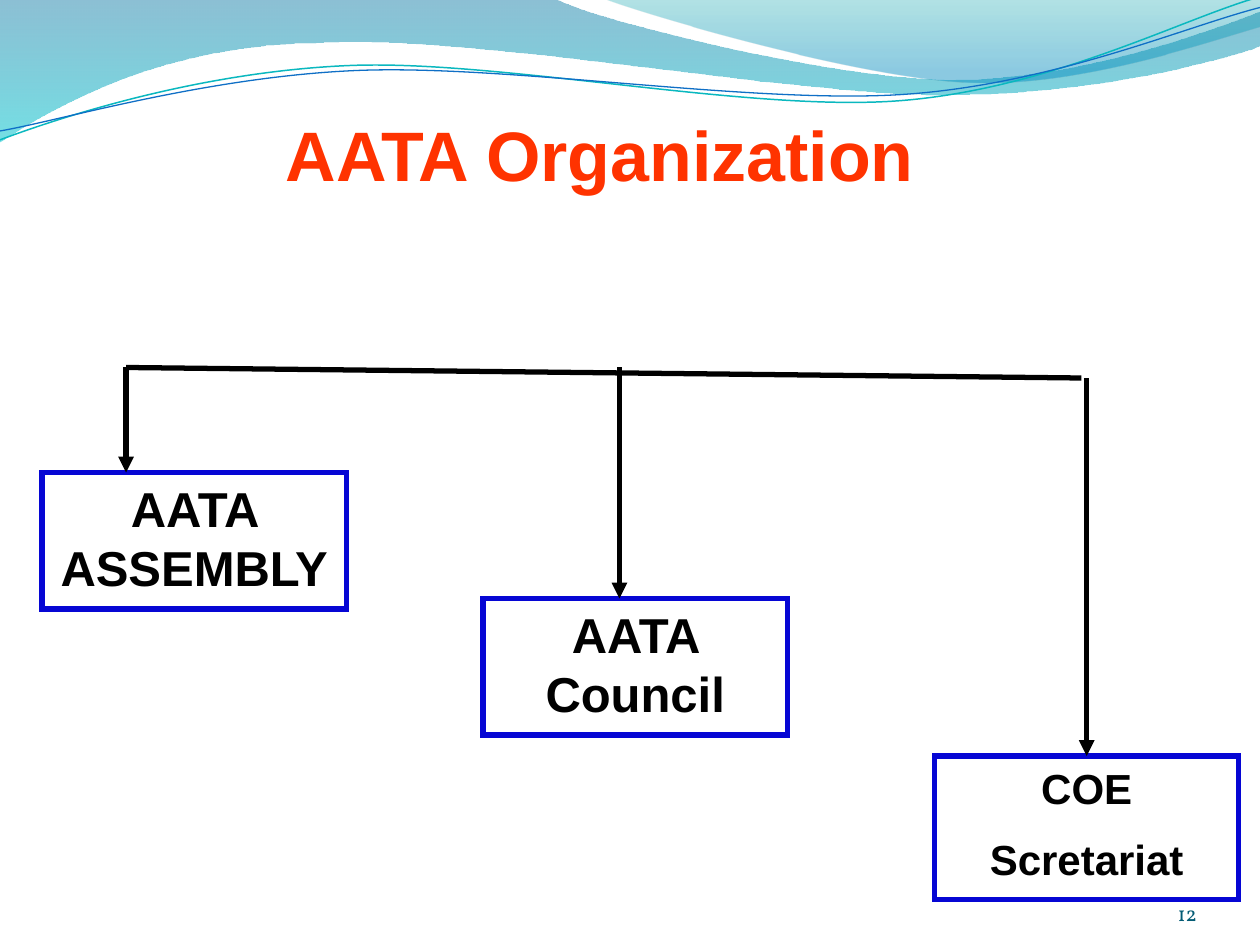
from math import cos, radians, sin

from lxml.etree import SubElement
from pptx import Presentation
from pptx.dml.color import RGBColor
from pptx.enum.shapes import MSO_CONNECTOR, MSO_SHAPE
from pptx.enum.text import MSO_ANCHOR, PP_ALIGN
from pptx.oxml.ns import qn
from pptx.util import Inches, Pt

color = RGBColor.from_string
GRID = Inches(1) // 12  # the slide is 120 columns by 90 rows
TILT = 2.7  # degrees the waves lean anticlockwise


def write(box, *lines, size, ink, font="Arial", bold=True, align=PP_ALIGN.CENTER,
          anchor=MSO_ANCHOR.TOP, gap=0):
    frame = box.text_frame
    frame.word_wrap = True
    frame.vertical_anchor = anchor
    for index, line in enumerate(lines):
        para = frame.add_paragraph() if index else frame.paragraphs[0]
        para.alignment = align
        para.space_before = Pt(gap if index else 0)
        span = para.add_run()
        span.text = line
        span.font.name, span.font.size, span.font.bold = font, Pt(size), bold
        span.font.color.rgb = color(ink)


def draw_curves(points, commands, close):
    """Build a freeform; each L takes one point and each C takes three."""
    start, *rest = [(Inches(x), Inches(y)) for x, y in points]
    builder = shapes.build_freeform(*start)
    builder.add_line_segments(rest, close=close)
    shape = builder.convert_to_shape()
    shape.shadow.inherit = False
    nodes = iter(list(shape.element.iter(qn("a:lnTo"))))
    for command in commands:
        node = next(nodes)
        if command == "C":
            curve = node.makeelement(qn("a:cubicBezTo"))
            node.addprevious(curve)
            for step in (node, next(nodes), next(nodes)):
                curve.append(step[0])
                step.getparent().remove(step)
    return shape


deck = Presentation()
deck.slide_width, deck.slide_height = 120 * GRID, 90 * GRID
page = deck.slides.add_slide(deck.slide_layouts[5])
shapes = page.shapes

# Header bands: points, commands, gradient stops as (position, colour, opacity %)
for points, commands, stops in (
        ([(0, -0.01), (4.4, -0.01), (4.76, 0.17), (6.64, 0.63), (7.58, 0.63),
          (8.53, 0.63), (9.58, 0.26), (10, 0.09), (10.01, 0.36),
          (9.83, 0.44), (8.7, 0.76), (7.46, 0.75), (6.22, 0.75), (3.82, 0.28), (2.57, 0.34),
          (1.29, 0.35), (0.46, 0.83), (-0.01, 1.13), (0, -0.01)],
         "LCCLCCCL", [(0, "0074A1", 45), (1, "00C6CF", 55)]),
        ([(4.79, -0.01), (5.09, 0.11), (6.82, 0.62), (7.69, 0.65),
          (8.56, 0.69), (9.61, 0.32), (10, 0.21), (10, 0), (4.79, -0.01)],
         "CCLL", [(0, "00A1A9", 30), (0.8, "008BBF", 45)])):
    band = draw_curves(points, commands, close=True)
    band.line.fill.background()
    band.fill.gradient()
    band.fill.gradient_angle = 270
    for stop, (position, tint, _) in zip(band.fill.gradient_stops, stops):
        stop.position = position
        stop.color.rgb = color(tint)
    for node, (_, _, opacity) in zip(band.element.iter(qn("a:srgbClr")), stops):
        SubElement(node, qn("a:alpha")).set("val", str(opacity * 1000))

# Header waves: levelled around their centre, then tilted as shapes
for points, (center_x, center_y), ink, width in (
        ([(0, 1.11), (0.48, 0.93), (1.58, 0.57), (2.77, 0.52), (3.95, 0.47), (5.93, 0.89),
          (7.13, 0.8), (8.33, 0.71), (9.38, 0.15), (9.98, -0.02)],
         (4.99, 0.58), "0AB8BF", 0.85),
        ([(0, 1.04), (0.47, 0.96), (1.64, 0.61), (2.83, 0.56), (4.03, 0.51), (5.97, 0.83),
          (7.17, 0.75), (8.36, 0.67), (9.41, 0.21), (10, 0.06)],
         (5, 0.59), "0F6FC6", 0.75)):
    c, s = cos(radians(TILT)), sin(radians(TILT))
    level = [(center_x + (x - center_x) * c - (y - center_y) * s,
              center_y + (x - center_x) * s + (y - center_y) * c) for x, y in points]
    wave = draw_curves(level, "CCC", close=False)
    wave.rotation = 360 - TILT
    wave.fill.background()
    wave.line.color.rgb = color(ink)
    wave.line.width = Pt(width)

title = shapes.title
title.left, title.top, title.width, title.height = (
    round(n * GRID) for n in (26, 10, 76, 15.6))
write(title, "AATA Organization", size=40, ink="FF3300", align=PP_ALIGN.LEFT)

number = shapes.add_textbox(*(round(n * GRID) for n in (104, 83.4, 10, 4.8)))
frame = number.text_frame
frame.margin_left = frame.margin_right = frame.margin_top = frame.margin_bottom = 0
write(number, "12", size=12, ink="045C75", font="Vollkorn", bold=False,
      align=PP_ALIGN.RIGHT, anchor=MSO_ANCHOR.BOTTOM)

# Organization boxes: column, row, height, text size, lines
boxes = []
for column, row, height, size, lines in (
        (4, 45, 13, 28, ["AATA ASSEMBLY"]),
        (46, 57, 13, 28, ["AATA Council"]),
        (89, 72, 13.7, 24, ["COE", "Scretariat"])):
    box = shapes.add_shape(MSO_SHAPE.RECTANGLE, column * GRID, row * GRID,
                           29 * GRID, round(height * GRID))
    box.shadow.inherit = False
    box.fill.background()
    box.line.color.rgb = color("0606D4")
    box.line.width = Pt(3)
    SubElement(box.element.spPr.find(qn("a:ln")), qn("a:miter")).set("lim", "800000")
    write(box, *lines, size=size, ink="000000", gap=12)
    boxes.append(box)

# Crossbar and the arrows down to the boxes: start, end, arrowhead, box joined at its top middle
for x1, y1, x2, y2, arrow, target in (
        (12, 35, 103, 36, False, None),
        (12, 35, 12, 45, True, None),
        (59, 35, 59, 57, True, None),
        (103.5, 36, 103.5, 72, True, boxes[2])):
    link = shapes.add_connector(MSO_CONNECTOR.STRAIGHT,
                                *(round(n * GRID) for n in (x1, y1, x2, y2)))
    link.line.color.rgb = color("000000")
    link.line.width = Pt(3)
    if arrow:
        SubElement(link.element.spPr.find(qn("a:ln")), qn("a:tailEnd")).set("type", "triangle")
    if target:
        link.end_connect(target, 0)
    SubElement(link.element.spPr, qn("a:effectLst"))

deck.save("out.pptx")
